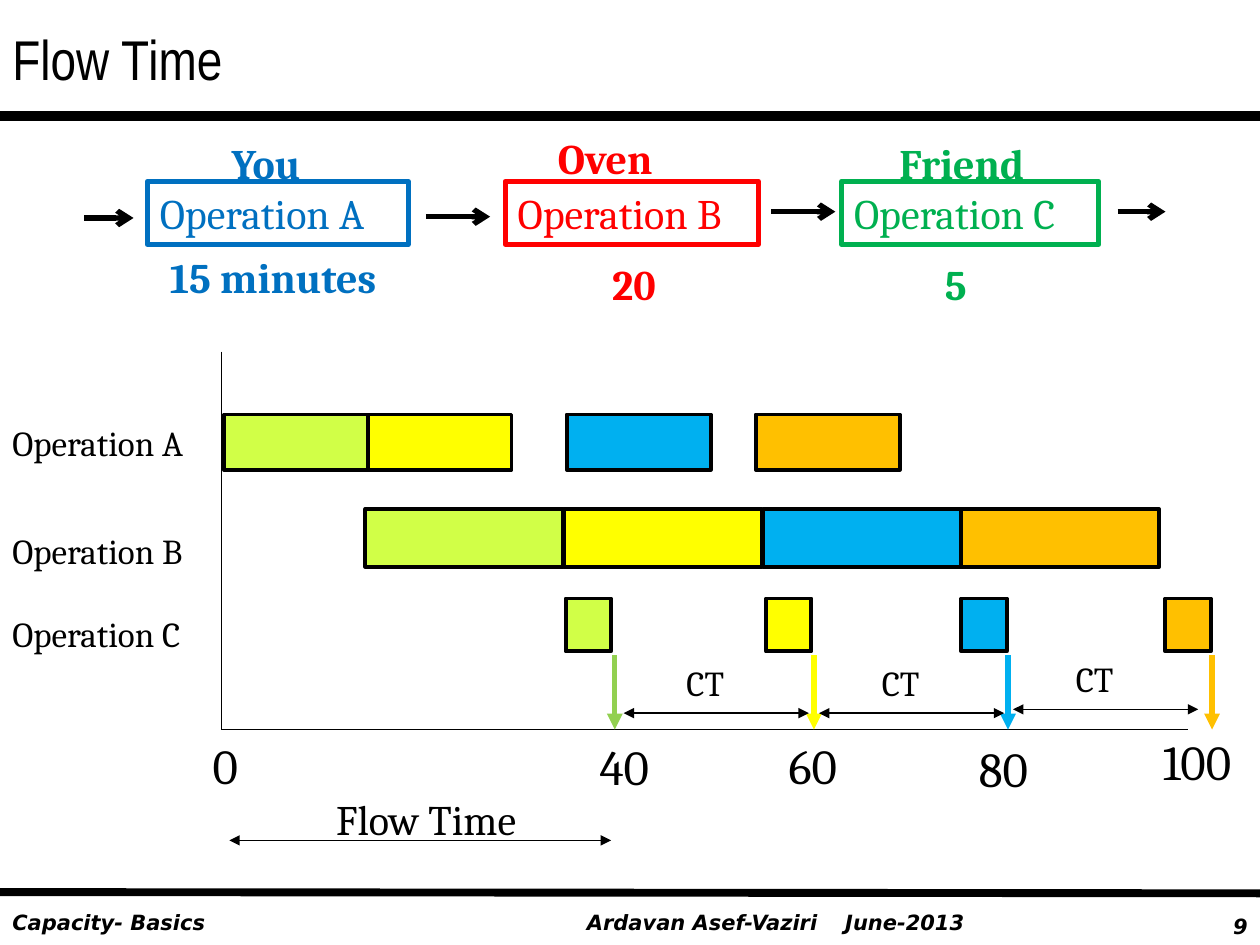
"""Build the flow time slide: a three-step process above its Gantt chart."""
from lxml import etree
from pptx import Presentation
from pptx.dml.color import RGBColor
from pptx.enum.shapes import MSO_CONNECTOR, MSO_SHAPE
from pptx.enum.text import MSO_ANCHOR, PP_ALIGN
from pptx.oxml.ns import qn
from pptx.util import Inches, Pt

RECTANGLE = MSO_SHAPE.RECTANGLE
STRAIGHT = MSO_CONNECTOR.STRAIGHT
TOP, MIDDLE = MSO_ANCHOR.TOP, MSO_ANCHOR.MIDDLE
LEFT, RIGHT = PP_ALIGN.LEFT, PP_ALIGN.RIGHT

THEME = {
    "black": "000000", "blue": "0070C0", "red": "FF0000", "green": "00B050",
    "lime": "D1FF47", "leaf": "92D050", "yellow": "FFFF00", "sky": "00B0F0", "orange": "FFC000",
    "title": 32, "axis": 28, "process": 24, "label": 20, "footer": 12,
    "title font": "Arial Narrow", "body font": "Cambria", "footer font": "DejaVu Sans",
}

presentation = Presentation()
presentation.slide_width, presentation.slide_height = Inches(10), Inches(7.5)
slide = presentation.slides.add_slide(presentation.slide_layouts[6])
CELL = presentation.slide_width // 100  # square grid: 100 columns by 75 rows


def add_box(area, text="", size="label", color="black", font="body font", bold=False,
            italic=False, align=LEFT, anchor=TOP, fill=None, outline=None, weight=0):
    area = [round(length * CELL) for length in area]
    if outline:
        shape = slide.shapes.add_shape(RECTANGLE, *area)
        shape.shadow.inherit = False
        shape.line.color.rgb = RGBColor.from_string(THEME[outline])
        shape.line.width = Pt(weight)
        if fill:
            shape.fill.solid()
            shape.fill.fore_color.rgb = RGBColor.from_string(THEME[fill])
        else:
            shape.fill.background()
    else:
        shape = slide.shapes.add_textbox(*area)
    if text:
        shape.text_frame.word_wrap = True
        shape.text_frame.vertical_anchor = anchor
        paragraph = shape.text_frame.paragraphs[0]
        paragraph.alignment = align
        run = paragraph.add_run()
        run.text = text
        run.font.name, run.font.size = THEME[font], Pt(THEME[size])
        run.font.bold, run.font.italic = bold, italic
        run.font.color.rgb = RGBColor.from_string(THEME[color])
    return shape


def add_line(ends, color="black", weight=0.75, head=None, tail=None):
    connector = slide.shapes.add_connector(STRAIGHT, *[round(length * CELL) for length in ends])
    connector.line.color.rgb = RGBColor.from_string(THEME[color])
    connector.line.width = Pt(weight)
    properties = connector.line._get_or_add_ln()
    for tag, arrow in (("a:headEnd", head), ("a:tailEnd", tail)):
        if arrow:
            etree.SubElement(properties, qn(tag), type=arrow)
    etree.SubElement(connector._element.spPr, qn("a:effectLst"))


# Title and footer
add_box((0, 0, 100, 9.2), "Flow Time", size="title", font="title font", anchor=MIDDLE)
add_line((0, 9.2, 100, 9.2), weight=6)
add_line((0, 70.8, 100, 70.9), weight=4.5)
footer = {"size": "footer", "font": "footer font", "bold": True, "italic": True}
add_box((0, 71.7, 46.7, 3), "Capacity- Basics", **footer)
author = add_box((45.6, 71.7, 33.5, 3), "Ardavan Asef-Vaziri\tJune-2013", **footer)
tab_list = etree.SubElement(author.text_frame.paragraphs[0]._p.get_or_add_pPr(), qn("a:tabLst"))
etree.SubElement(tab_list, qn("a:tab"), pos=str(round(20.5 * CELL)), algn="l")
add_box((92.5, 72, 7.5, 3), "9", align=RIGHT, **footer)

# Process: operation box, resource above it, minutes below it
for color, operation, left, width, resource, resource_area, minutes, minutes_area in (
    ("blue", "Operation A", 11.7, 20.7, "You", (17.4, 10.4, 8.2, 5), "15 minutes", (12.5, 19.5, 20, 5)),
    ("red", "Operation B", 40.1, 20.1, "Oven", (43.3, 10, 10.4, 5), "20", (47.6, 20, 5.7, 5)),
    ("green", "Operation C", 66.8, 20.4, "Friend", (70.4, 10.4, 12.1, 5), "5", (74, 20, 4, 5)),
):
    add_box(resource_area, resource, size="process", color=color, bold=True)
    add_box((left, 14.4, width, 5), operation, size="process", color=color, outline=color, weight=3)
    add_box(minutes_area, minutes, size="process", color=color, bold=True)
for start, end, height in ((6.7, 10.6, 17.3), (33.8, 38.9, 17.2), (61.2, 66.3, 16.8), (88.7, 92.5, 16.8)):
    add_line((start, height, end, height), weight=3, tail="arrow")

# Gantt chart: axes, then one bar per operation for each unit
ORIGIN, BASELINE = 17.6, 57.9
add_line((ORIGIN, 27.9, ORIGIN, BASELINE))
add_line((ORIGIN, BASELINE, 94.3, BASELINE))
bar_rows = ((32.9, 11.4, 4.4), (40.4, 15.7, 4.6), (47.5, 3.6, 4.2))
for fill, drop_color, starts, drop in (
    ("lime", "leaf", (17.8, 29, 44.9), 48.8),
    ("yellow", "yellow", (29.2, 44.8, 60.8), 64.6),
    ("sky", "sky", (45, 60.6, 76.3), 80),
    ("orange", "orange", (60, 76.3, 92.5), 96.2),
):
    for start, (top, width, height) in zip(starts, bar_rows):
        add_box((start, top, width, height), fill=fill, outline="black", weight=2.25)
    add_line((drop, 52, drop, BASELINE), color=drop_color, weight=3, tail="triangle")

for operation, top in (("Operation A", 33), ("Operation B", 41.5), ("Operation C", 48.1)):
    add_box((0, top, 17.5, 4.4), operation)
for time, left, top, width in (("0", 15.9, 57.9, 4), ("40", 46.6, 58, 5.9), ("60", 61.6, 57.9, 5.9),
                               ("80", 76.7, 58.1, 5.9), ("100", 91.3, 57.6, 7.9)):
    add_box((left, top, width, 5.7), time, size="axis")

# Time spans
for text, size, area, start, end, height in (
    ("CT", "label", (53.5, 52, 5.7, 4.3), 49.5, 64.2, 56.6),
    ("CT", "label", (69, 52, 5.7, 4.3), 65, 79.7, 56.6),
    ("CT", "label", (84.4, 51.7, 5.7, 4.3), 80.4, 95.1, 56.3),
    ("Flow Time", "process", (25.7, 62.5, 18, 5), 18.2, 48.5, 66.7),
):
    add_box(area, text, size=size)
    add_line((start, height, end, height), head="triangle", tail="triangle")

presentation.save("out.pptx")
